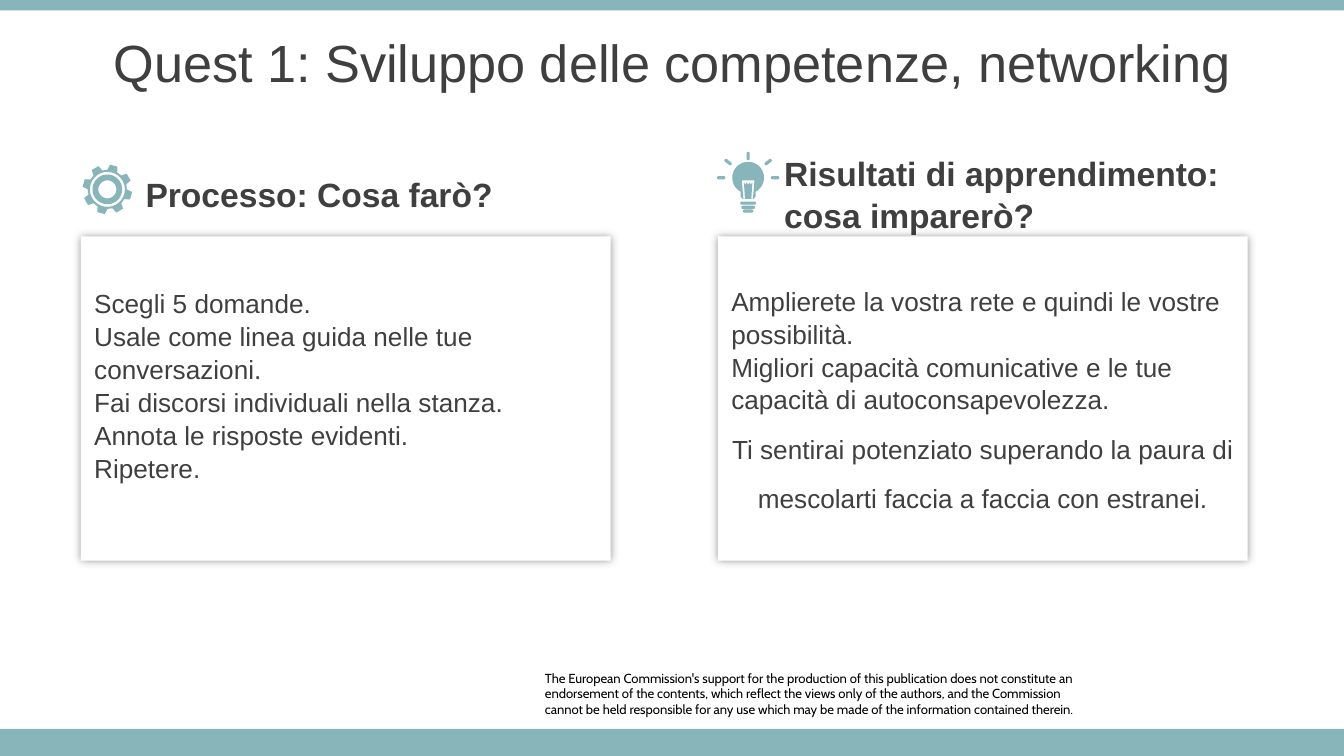
from dataclasses import dataclass
from math import cos, radians, sin

from lxml.etree import SubElement
from pptx import Presentation
from pptx.dml.color import RGBColor
from pptx.enum.shapes import MSO_SHAPE
from pptx.enum.text import MSO_ANCHOR, MSO_AUTO_SIZE, PP_ALIGN
from pptx.oxml.ns import qn
from pptx.util import Cm, Pt


@dataclass(frozen=True)
class Theme:
    accent: RGBColor = RGBColor(0x87, 0xB5, 0xBA)
    ink: RGBColor = RGBColor(0x3F, 0x3F, 0x3F)
    black: RGBColor = RGBColor(0, 0, 0)
    card: RGBColor = RGBColor(0xFF, 0xFF, 0xFF)
    font: str = "Arial"
    notice_font: str = "Cabin"
    title_size: Pt = Pt(28)
    heading_size: Pt = Pt(18)
    body_size: Pt = Pt(14)
    notice_size: Pt = Pt(7)


theme = Theme()


def write(holder, box, text, size, color=theme.ink, font=theme.font,
          bold=False, align=PP_ALIGN.LEFT, spacing=1.0):
    holder.left, holder.top, holder.width, holder.height = (Cm(v) for v in box)
    frame = holder.text_frame
    frame.word_wrap = True
    frame.auto_size = MSO_AUTO_SIZE.NONE
    frame.vertical_anchor = MSO_ANCHOR.MIDDLE
    frame.margin_left = frame.margin_right = Cm(0.25)
    frame.margin_top = frame.margin_bottom = Cm(0.13)
    frame.text = text
    for paragraph in frame.paragraphs:
        properties = paragraph._p.get_or_add_pPr()
        properties.set("marL", "0")
        properties.set("indent", "0")
        SubElement(properties, qn("a:buNone"))
        paragraph.alignment = align
        paragraph.line_spacing = spacing
        paragraph.space_before = Pt(0)
        for run in paragraph.runs:
            run.font.size = size
            run.font.name = font
            run.font.bold = bold
            run.font.color.rgb = color


def arc(radius, start=0, end=360, step=6, center=(0, 0)):
    return [(center[0] + radius * cos(radians(a)), center[1] + radius * sin(radians(a)))
            for a in range(start, end + 1, step)]


prs = Presentation()
prs.slide_width, prs.slide_height = Cm(25.4), Cm(14.29)
slide = prs.slides.add_slide(prs.slide_layouts.get_by_name("Comparison"))
title, left_heading, left_card, right_heading, right_card = slide.placeholders

for top, height in ((0, 0.2), (13.78, 0.51)):
    band = slide.shapes.add_shape(MSO_SHAPE.RECTANGLE, 0, Cm(top), prs.slide_width, Cm(height))
    band.shadow.inherit = False
    band.fill.solid()
    band.fill.fore_color.rgb = theme.accent
    band.line.fill.background()

write(title, (0, 0.36, 25.4, 1.6), "Quest 1: Sviluppo delle competenze, networking",
      theme.title_size, align=PP_ALIGN.CENTER)

columns = (
    (left_heading, 2.5, "Processo: Cosa farò?", left_card, 1.53, (
        "Scegli 5 domande.",
        "Usale come linea guida nelle tue conversazioni.",
        "Fai discorsi individuali nella stanza.",
        "Annota le risposte evidenti.",
        "Ripetere.",
    )),
    (right_heading, 14.57, "Risultati di apprendimento: cosa imparerò?", right_card, 13.57, (
        "Amplierete la vostra rete e quindi le vostre possibilità.",
        "Migliori capacità comunicative e le tue capacità di autoconsapevolezza.",
        "Ti sentirai potenziato superando la paura di mescolarti faccia a faccia con estranei.",
    )),
)
for heading, heading_left, heading_text, card, card_left, lines in columns:
    write(heading, (heading_left, 3.25, 9.03, 0.8), heading_text,
          theme.heading_size, bold=True, spacing=1.04)
    write(card, (card_left, 4.47, 10.01, 6.13), "\n".join(lines),
          theme.body_size, spacing=1.05)
    card.fill.solid()
    card.fill.fore_color.rgb = theme.card
    card.line.fill.background()
    card.shadow.inherit = False
    effects = card._element.spPr.find(qn("a:effectLst"))
    glow = SubElement(effects, qn("a:outerShdw"), blurRad=str(Pt(5)), dist="0",
                      algn="ctr", rotWithShape="0")
    shade = SubElement(glow, qn("a:srgbClr"), val=str(theme.black))
    SubElement(shade, qn("a:alpha"), val="40000")

left_card.text_frame.margin_bottom = Cm(0.66)
closing = right_card.text_frame.paragraphs[-1]
closing.alignment = PP_ALIGN.CENTER
closing.line_spacing = 1.57

teeth = [(radius * cos(radians(angle + offset)), radius * sin(radians(angle + offset)))
         for angle in range(-75, 285, 45)
         for radius, offset in ((0.37, -15), (0.47, -9), (0.47, 9), (0.37, 15))]
gear = [teeth, arc(0.33), arc(0.28), arc(0.17)]

glass = arc(0.3, 118, 422, 8) + [(0.14, 0.36), (0.1, 0.4), (-0.1, 0.4), (-0.14, 0.36)]
filament = [(-0.12, 0.05), (0.12, 0.05), (0.09, 0.4), (0.06, 0.4), (0.08, 0.09),
            (0.05, 0.13), (0.03, 0.09), (0, 0.13), (-0.03, 0.09), (-0.05, 0.13),
            (-0.08, 0.09), (-0.06, 0.4), (-0.09, 0.4)]
bulb = [glass, filament]
bars = [(0, y, half, 0) for y, half in ((0.48, 0.12), (0.56, 0.1), (0.63, 0.07))]
rays = [(reach * cos(radians(angle)), reach * sin(radians(angle)), 0.05, angle)
        for angle, reach in ((-180, 0.51), (-142, 0.48), (-90, 0.41), (-38, 0.48), (0, 0.51))]
for x, y, half, angle in bars + rays:
    dx, dy = half * cos(radians(angle)), half * sin(radians(angle))
    bulb.append(arc(0.03, angle - 90, angle + 90, 30, (x + dx, y + dy))
                + arc(0.03, angle + 90, angle + 270, 30, (x - dx, y - dy)))

for center_x, center_y, contours in ((2.03, 3.58, gear), (14.14, 3.36, bulb)):
    outlines = [[(round(1000 * (center_x + x)), round(1000 * (center_y + y)))
                 for x, y in contour] for contour in contours]
    builder = slide.shapes.build_freeform(*outlines[0][0], scale=Cm(0.001))
    builder.add_line_segments(outlines[0][1:], close=True)
    for outline in outlines[1:]:
        builder.move_to(*outline[0])
        builder.add_line_segments(outline[1:], close=True)
    icon = builder.convert_to_shape()
    icon.shadow.inherit = False
    icon.fill.solid()
    icon.fill.fore_color.rgb = theme.accent
    icon.line.fill.background()

notice = slide.shapes.add_textbox(0, 0, 0, 0)
write(notice, (10.3, 12.67, 10.6, 0.89),
      "The European Commission's support for the production of this publication does not "
      "constitute an endorsement of the contents, which reflect the views only of the authors, "
      "and the Commission\n"
      "cannot be held responsible for any use which may be made of the information contained therein.",
      theme.notice_size, theme.black, theme.notice_font)
notice_frame = notice.text_frame
notice_frame.vertical_anchor = MSO_ANCHOR.TOP
notice_frame.margin_left = notice_frame.margin_right = 0
notice_frame.margin_top = notice_frame.margin_bottom = 0

prs.save("out.pptx")
